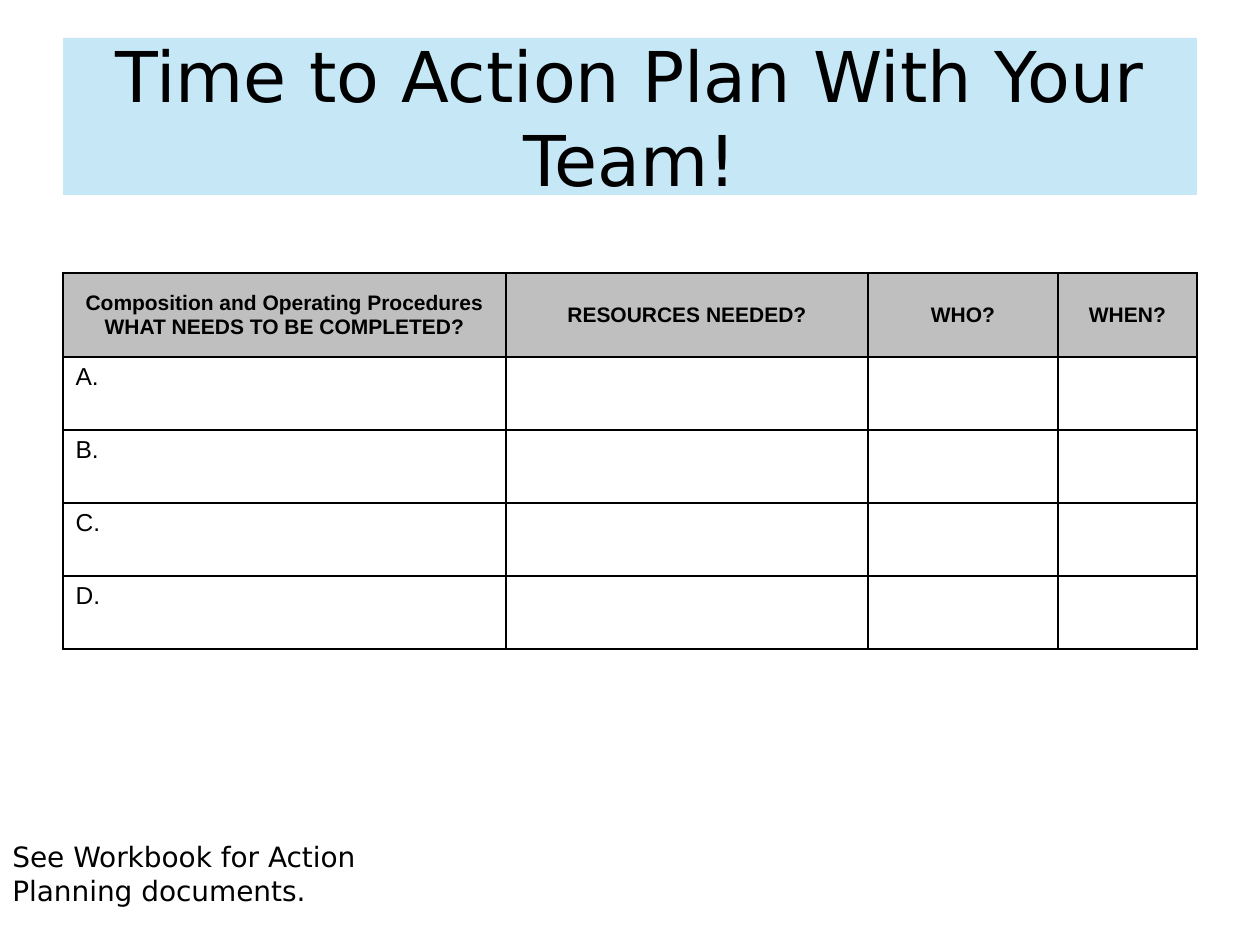
import pptx
import pptx.util
import pptx.dml.color
import pptx.enum.text
import pptx.oxml
import pptx.oxml.ns
import lxml.etree

SCALE = 914400 / 126
COLORS = {"text": "000000", "band": "A9DCF2", "head": "BFBFBF", "rule": "000000"}
ALIGN = pptx.enum.text.PP_ALIGN
MIDDLE = pptx.enum.text.MSO_ANCHOR.MIDDLE
TOP = pptx.enum.text.MSO_ANCHOR.TOP

HEADS = ["Composition and Operating Procedures\vWHAT NEEDS TO BE COMPLETED?",
         "RESOURCES NEEDED?", "WHO?", "WHEN?"]
TASKS = ["A.", "B.", "C.", "D."]
WIDTHS = [443, 362, 190, 139]
HEIGHTS = [84] + [73] * len(TASKS)


def px(n):
    return pptx.util.Emu(round(n * SCALE))


def color(name):
    return pptx.dml.color.RGBColor.from_string(COLORS[name])


def paint(fill, name):
    fill.solid()
    fill.fore_color.rgb = color(name)


def write(frame, text, size, font, bold=False, align=ALIGN.LEFT):
    frame.text = text
    for par in frame.paragraphs:
        par.alignment = align
        for run in par.runs:
            run.font.size = pptx.util.Pt(size)
            run.font.name = font
            run.font.bold = bold
            run.font.color.rgb = color("text")


def border(cell):
    props = cell._tc.get_or_add_tcPr()
    for spot, side in enumerate(("lnL", "lnR", "lnT", "lnB")):
        line = pptx.oxml.parse_xml(
            f'<a:{side} {pptx.oxml.ns.nsdecls("a")} w="12700"><a:solidFill>'
            f'<a:srgbClr val="{COLORS["rule"]}"/></a:solidFill></a:{side}>')
        props.insert(spot, line)  # borders come before the fill


def add_title(slide):
    title = slide.shapes.title
    title.left, title.top, title.width, title.height = map(px, (63, 38, 1134, 157))
    paint(title.fill, "band")
    tint = title.fill._xPr.find(".//" + pptx.oxml.ns.qn("a:srgbClr"))
    lxml.etree.SubElement(tint, pptx.oxml.ns.qn("a:alpha"), val="67000")
    frame = title.text_frame
    frame.word_wrap = True
    frame.auto_size = pptx.enum.text.MSO_AUTO_SIZE.NONE
    frame.vertical_anchor = MIDDLE
    write(frame, "Time to Action Plan With Your Team!", 40, "DejaVu Sans",
          align=ALIGN.CENTER)


def add_note(slide):
    frame = slide.shapes.add_textbox(*map(px, (0, 827, 491, 118))).text_frame
    frame.word_wrap = True
    frame.margin_left = frame.margin_right = pptx.util.Inches(0.1)
    frame.margin_top = frame.margin_bottom = pptx.util.Inches(0.1)
    write(frame, "See Workbook for Action Planning documents.", 16, "DejaVu Sans")


def add_plan(slide):
    rows = [HEADS] + [[task, "", "", ""] for task in TASKS]
    table = slide.shapes.add_table(
        len(rows), len(HEADS), px(63), px(273), px(sum(WIDTHS)), px(sum(HEIGHTS))).table
    for col, width in zip(table.columns, WIDTHS):
        col.width = px(width)
    for row, height in zip(table.rows, HEIGHTS):
        row.height = px(height)
    for r, row in enumerate(rows):
        head = r == 0
        for c, text in enumerate(row):
            cell = table.cell(r, c)
            cell.vertical_anchor = MIDDLE if head else TOP
            if head:
                paint(cell.fill, "head")
                write(cell.text_frame, text, 12, "Arial", True, ALIGN.CENTER)
            else:
                cell.fill.background()
                write(cell.text_frame, text, 14, "Arial")
            border(cell)


def main():
    deck = pptx.Presentation()
    deck.slide_width, deck.slide_height = px(1260), px(945)
    slide = deck.slides.add_slide(deck.slide_layouts[5])  # title only
    add_title(slide)
    add_note(slide)
    add_plan(slide)
    deck.save("out.pptx")


if __name__ == "__main__":
    main()
